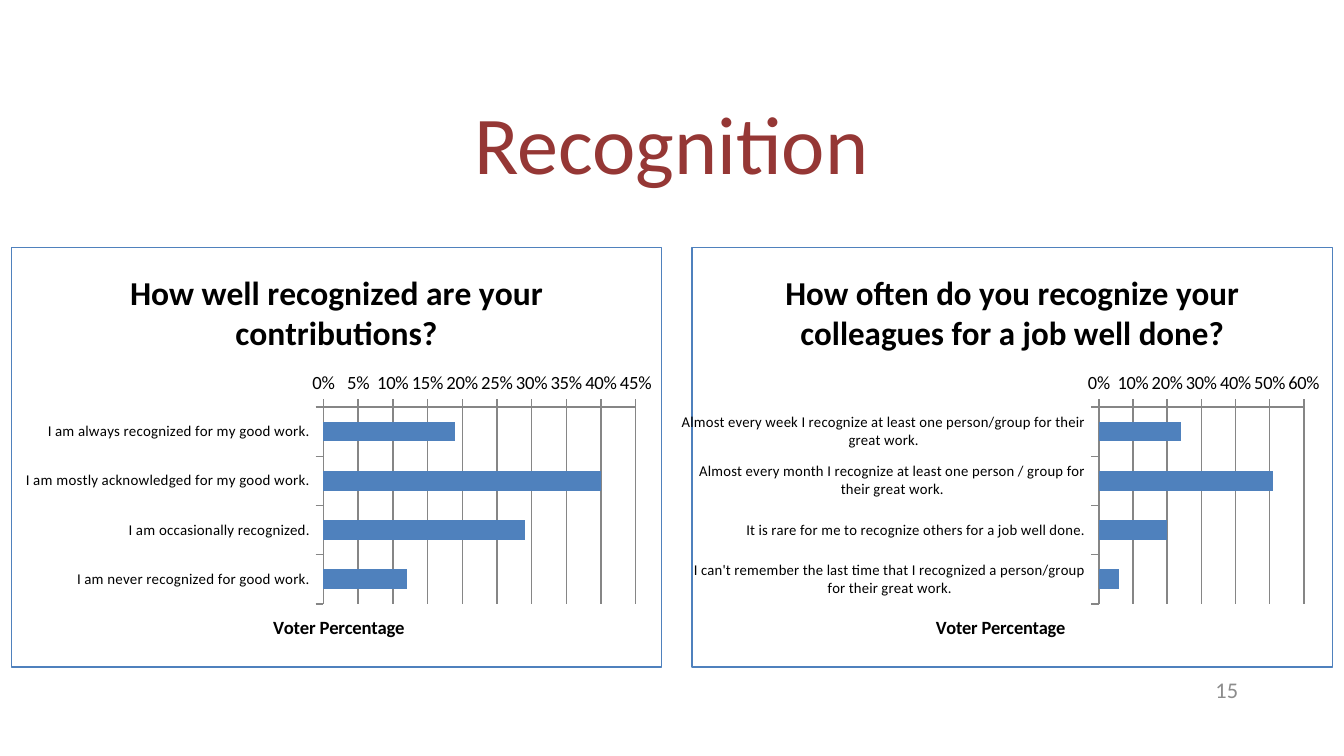
from dataclasses import dataclass

from lxml.etree import fromstring
from pptx import Presentation
from pptx.chart.data import CategoryChartData
from pptx.dml.color import RGBColor
from pptx.enum.chart import XL_CHART_TYPE, XL_TICK_MARK
from pptx.enum.text import MSO_ANCHOR, PP_ALIGN
from pptx.oxml.ns import nsdecls
from pptx.util import Cm, Pt


@dataclass(frozen=True)
class Theme:
    font: str = "Calibri"
    heading: str = "953735"
    text: str = "000000"
    muted: str = "8C8C8C"
    accent: str = "4F81BD"
    axis: str = "868686"
    heading_size: int = 44
    chart_title_size: int = 18
    number_size: int = 12
    chart_size: int = 10
    category_size: int = 8


THEME = Theme()
SLIDE_WIDTH, SLIDE_HEIGHT = 25.4, 14.29
CHART_MARGIN, CHART_TOP = 0.2, 4.67
CHART_WIDTH, CHART_HEIGHT = 12.32, 7.95

# Each survey: question, (plot left, plot width) as chart fractions, answers
SURVEYS = [
    ("How well recognized are your contributions?", (0.48, 0.48), {
        "I am always recognized for my good work.": 0.19,
        "I am mostly acknowledged for my good work.": 0.4,
        "I am occasionally recognized.": 0.29,
        "I am never recognized for good work.": 0.12,
    }),
    ("How often do you recognize your colleagues for a job well done?", (0.635, 0.32), {
        "Almost every week I recognize at least one person/group for their great work.": 0.24,
        "Almost every month I recognize at least one person / group for their great work.": 0.51,
        "It is rare for me to recognize others for a job well done.": 0.2,
        "I can't remember the last time that I recognized a person/group for their great work.": 0.06,
    }),
]


def style_font(font, size, color, bold=False):
    font.name = THEME.font
    font.size = Pt(size)
    font.bold = bold
    font.color.rgb = RGBColor.from_string(color)


def add_text(slide, box, text, size, color, alignment, line_spacing=None):
    shape = slide.shapes.add_textbox(*map(Cm, box))
    text_frame = shape.text_frame
    text_frame.word_wrap = True
    text_frame.vertical_anchor = MSO_ANCHOR.MIDDLE
    text_frame.text = text
    paragraph = text_frame.paragraphs[0]
    paragraph.alignment = alignment
    paragraph.line_spacing = line_spacing
    style_font(paragraph.runs[0].font, size, color)


def set_chart_text(title, text, size):
    title.text_frame.text = text
    style_font(title.text_frame.paragraphs[0].runs[0].font, size, THEME.text, bold=True)


def style_axis(axis, size):
    axis.major_tick_mark = XL_TICK_MARK.OUTSIDE
    axis.minor_tick_mark = XL_TICK_MARK.NONE
    style_font(axis.tick_labels.font, size, THEME.text)
    axis.format.line.color.rgb = RGBColor.from_string(THEME.axis)
    axis.format.line.width = Pt(0.75)


def set_plot_layout(chart, left, width, top=0.38, height=0.47):
    plot_area = chart.element.xpath("c:chart/c:plotArea")[0]
    for layout in plot_area.xpath("c:layout"):
        plot_area.remove(layout)
    plot_area.insert(0, fromstring(
        f'<c:layout {nsdecls("c")}><c:manualLayout><c:layoutTarget val="inner"/>'
        f'<c:xMode val="edge"/><c:yMode val="edge"/><c:x val="{left}"/><c:y val="{top}"/>'
        f'<c:w val="{width}"/><c:h val="{height}"/></c:manualLayout></c:layout>'))


def set_chart_border(chart):
    chart.element.xpath("c:chart")[0].addnext(fromstring(
        f'<c:spPr {nsdecls("c", "a")}><a:noFill/><a:ln w="{Pt(0.75)}"><a:solidFill>'
        f'<a:srgbClr val="{THEME.accent}"/></a:solidFill></a:ln></c:spPr>'))


def add_survey_chart(slide, left, question, plot_span, answers):
    data = CategoryChartData(number_format="0%")
    data.categories = list(answers)
    data.add_series("Series 1", list(answers.values()))
    box = map(Cm, (left, CHART_TOP, CHART_WIDTH, CHART_HEIGHT))
    chart = slide.shapes.add_chart(XL_CHART_TYPE.BAR_CLUSTERED, *box, data).chart
    style_font(chart.font, THEME.chart_size, THEME.text)
    chart.has_legend = False
    chart.has_title = True
    set_chart_text(chart.chart_title, question, THEME.chart_title_size)

    # Bars
    plot = chart.plots[0]
    plot.gap_width = 150
    plot.vary_by_categories = False
    fill = plot.series[0].format.fill
    fill.solid()
    fill.fore_color.rgb = RGBColor.from_string(THEME.accent)

    # Axes
    style_axis(chart.category_axis, THEME.category_size)
    chart.category_axis.reverse_order = True
    value_axis = chart.value_axis
    style_axis(value_axis, THEME.chart_size)
    value_axis.has_major_gridlines = True
    value_axis.major_gridlines.format.line.color.rgb = RGBColor.from_string(THEME.axis)
    value_axis.tick_labels.number_format = "0%"
    value_axis.tick_labels.number_format_is_linked = False
    value_axis.has_title = True
    set_chart_text(value_axis.axis_title, "Voter Percentage", THEME.chart_size)

    set_plot_layout(chart, *plot_span)
    set_chart_border(chart)


def main():
    presentation = Presentation()
    presentation.slide_width = Cm(SLIDE_WIDTH)
    presentation.slide_height = Cm(SLIDE_HEIGHT)
    slide = presentation.slides.add_slide(presentation.slide_layouts[6])

    # Heading
    add_text(slide, (1.75, 1.42, 21.89, 2.77), "Recognition",
             THEME.heading_size, THEME.heading, PP_ALIGN.CENTER, 0.9)

    # Survey charts, one against each side margin
    chart_lefts = (CHART_MARGIN, SLIDE_WIDTH - CHART_MARGIN - CHART_WIDTH)
    for left, survey in zip(chart_lefts, SURVEYS):
        add_survey_chart(slide, left, *survey)

    # Slide number
    add_text(slide, (17.93, 12.65, 5.72, 0.76), "15",
             THEME.number_size, THEME.muted, PP_ALIGN.RIGHT)

    presentation.save("out.pptx")


if __name__ == "__main__":
    main()
